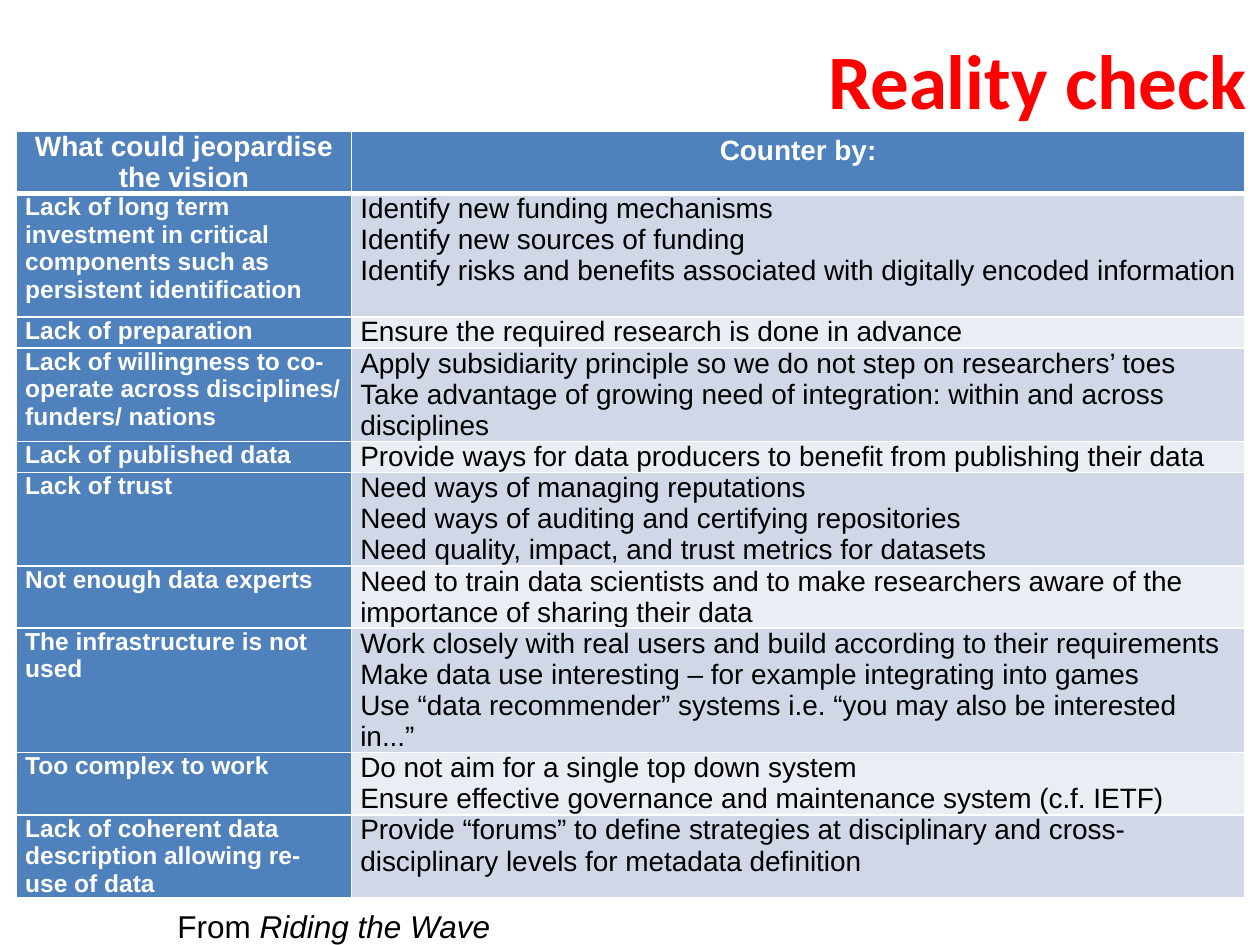
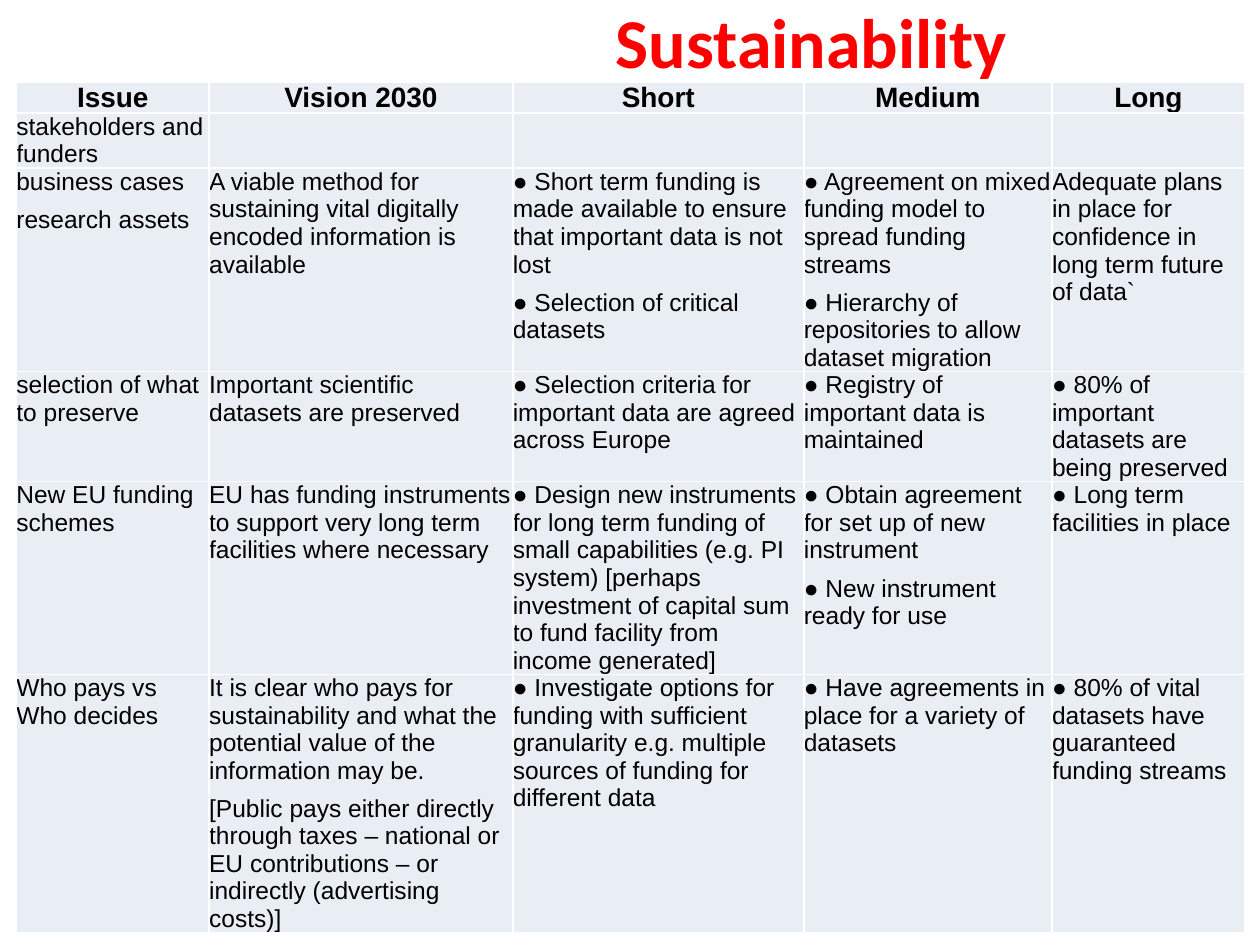
from lxml import etree
from pptx import Presentation
from pptx.dml.color import RGBColor
from pptx.enum.text import MSO_ANCHOR, MSO_AUTO_SIZE, PP_ALIGN
from pptx.oxml.ns import qn
from pptx.util import Inches, Pt

CENTER, RIGHT = PP_ALIGN.CENTER, PP_ALIGN.RIGHT
MIDDLE = MSO_ANCHOR.MIDDLE
NO_AUTOFIT = MSO_AUTO_SIZE.NONE
TITLE_ONLY = 5

RED = RGBColor(0xFF, 0x00, 0x00)
BLACK = RGBColor(0x00, 0x00, 0x00)
WHITE = RGBColor(0xFF, 0xFF, 0xFF)
BLUE = RGBColor(0x4F, 0x81, 0xBD)
BAND_DARK = RGBColor(0xD0, 0xD8, 0xE8)
BAND_LIGHT = RGBColor(0xE9, 0xED, 0xF4)

TITLE_FONT, BODY_FONT = "Calibri", "Arial"
TABLE_LEFT = 0.13

# Slide 1: risk on the left, countermeasures on the right
RISKS = [
    ("What could jeopardise the vision", "Counter by:"),
    ("Lack of long term investment in critical components such as persistent identification",
     "Identify new funding mechanisms\n"
     "Identify new sources of funding\n"
     "Identify risks and benefits associated with digitally encoded information"),
    ("Lack of preparation", "Ensure the required research is done in advance"),
    ("Lack of willingness to co-operate across disciplines/ funders/ nations",
     "Apply subsidiarity principle so we do not step on researchers’ toes\n"
     "Take advantage of growing need of integration: within and across disciplines"),
    ("Lack of published data",
     "Provide ways for data producers to benefit from publishing their data"),
    ("Lack of trust",
     "Need ways of managing reputations\n"
     "Need ways of auditing and certifying repositories\n"
     "Need quality, impact, and trust metrics for datasets"),
    ("Not enough data experts",
     "Need to train data scientists and to make researchers aware of the "
     "importance of sharing their data"),
    ("The infrastructure is not used",
     "Work closely with real users and build according to their requirements\n"
     "Make data use interesting – for example integrating into games\n"
     "Use “data recommender” systems i.e. “you may also be interested in...”"),
    ("Too complex to work",
     "Do not aim for a single top down system\n"
     "Ensure effective governance and maintenance system (c.f. IETF)"),
    ("Lack of coherent data description allowing re-use of data",
     "Provide “forums” to define strategies at disciplinary and "
     "cross-disciplinary levels for metadata definition"),
]
RISK_COLS = [2.66, 7.09]
RISK_ROWS = [0.48, 0.98, 0.24, 0.74, 0.24, 0.74, 0.49, 0.98, 0.49, 0.65]

# Slide 2: issues against time horizons
ISSUES = [
    ("Issue", "Vision 2030", "Short", "Medium", "Long"),
    ("stakeholders and funders", "", "", "", ""),
    ("business cases\nresearch assets",
     "A viable method for sustaining vital digitally encoded information is available",
     "● Short term funding is made available to ensure that important data is not lost\n"
     "● Selection of critical datasets",
     "● Agreement on mixed funding model to spread funding streams\n"
     "● Hierarchy of repositories to allow dataset migration",
     "Adequate plans in place for confidence in long term future of data`"),
    ("selection of what to preserve",
     "Important scientific datasets are preserved",
     "● Selection criteria for important data are agreed across Europe",
     "● Registry of important data is maintained",
     "● 80% of important datasets are being preserved"),
    ("New EU funding schemes",
     "EU has funding instruments to support very long term facilities where necessary",
     "● Design new instruments for long term funding of small capabilities (e.g. PI system) "
     "[perhaps investment of capital sum to fund facility from income generated]",
     "● Obtain agreement for set up of new instrument\n"
     "● New instrument ready for use",
     "● Long term facilities in place"),
    ("Who pays vs Who decides",
     "It is clear who pays for sustainability and what the potential value of the "
     "information may be.\n"
     "[Public pays either directly through taxes – national or EU contributions – "
     "or indirectly (advertising costs)]",
     "● Investigate options for funding with sufficient granularity e.g. multiple sources "
     "of funding for different data",
     "● Have agreements in place for a variety of datasets",
     "● 80% of vital datasets have guaranteed funding streams"),
]
ISSUE_COLS = [1.53, 2.41, 2.31, 1.97, 1.53]
ISSUE_ROWS = [0.24, 0.43, 1.61, 0.86, 1.53, 2.04]


def style_run(r, size, color=BLACK, bold=False, name=BODY_FONT):
    r.font.name = name
    r.font.size = Pt(size)
    r.font.bold = bold
    r.font.color.rgb = color


def add_title_slide(prs, title, height, size, align):
    s = prs.slides.add_slide(prs.slide_layouts[TITLE_ONLY])
    sp = s.shapes.title
    sp.left, sp.top = Inches(2.88), 0
    sp.width, sp.height = Inches(7.12), Inches(height)
    tf = sp.text_frame
    tf.text = title
    tf.auto_size = NO_AUTOFIT
    tf.vertical_anchor = MIDDLE
    p = tf.paragraphs[0]
    p.alignment = align
    style_run(p.runs[0], size, RED, True, TITLE_FONT)
    return s


def set_borders(cell, top=1, bottom=1):
    """White cell borders; widths in points."""
    tc_pr = cell._tc.get_or_add_tcPr()
    for tag, width in (("lnL", 1), ("lnR", 1), ("lnT", top), ("lnB", bottom)):
        ln = etree.SubElement(tc_pr, qn("a:" + tag), w=str(Pt(width)))
        fill = etree.SubElement(ln, qn("a:solidFill"))
        etree.SubElement(fill, qn("a:srgbClr"), val=str(WHITE))


def add_grid(s, top, cols, rows, data):
    """Add a table holding the texts of data, without its built-in style flags."""
    frame = s.shapes.add_table(len(rows), len(cols), Inches(TABLE_LEFT), Inches(top),
                               Inches(sum(cols)), Inches(sum(rows)))
    table = frame.table
    table.first_row = table.horz_banding = False
    for col, width in zip(table.columns, cols):
        col.width = Inches(width)
    for row, height, texts in zip(table.rows, rows, data):
        row.height = Inches(height)
        for cell, text in zip(row.cells, texts):
            cell.text = text
    return table


def style_cell(cell, fill, size, color=BLACK, bold=False, inset=0, align=None,
               space_after=None, top=1, bottom=1):
    cell.margin_left = cell.margin_right = Inches(inset)
    cell.margin_top = cell.margin_bottom = 0
    set_borders(cell, top, bottom)
    cell.fill.solid()
    cell.fill.fore_color.rgb = fill
    for p in cell.text_frame.paragraphs:
        p.alignment = align
        p.space_after = space_after
        for r in p.runs:
            style_run(r, size, color, bold)


def add_risk_table(s):
    table = add_grid(s, 1.04, RISK_COLS, RISK_ROWS, RISKS)
    for i, row in enumerate(table.rows):
        for j, cell in enumerate(row.cells):
            header = i == 0
            label = header or j == 0
            band = BAND_DARK if i % 2 else BAND_LIGHT
            style_cell(cell, BLUE if label else band,
                       size=14 if j == 0 and not header else 16,
                       color=WHITE if label else BLACK, bold=label, inset=0.07,
                       align=CENTER if header else None,
                       top=3 if i == 1 else 1, bottom=3 if header else 1)
    table.cell(0, 1).text_frame.paragraphs[0].line_spacing = 1.15


def add_issue_table(s):
    table = add_grid(s, 0.65, ISSUE_COLS, ISSUE_ROWS, ISSUES)
    for i, row in enumerate(table.rows):
        header = i == 0
        for cell in row.cells:
            style_cell(cell, BAND_LIGHT, size=16 if header else 14, bold=header,
                       align=CENTER if header else None, space_after=Pt(6))


def add_source_note(s, lead, work):
    tf = s.shapes.add_textbox(Inches(1.31), Inches(7.15), Inches(6.4), Inches(0.4)).text_frame
    tf.word_wrap = True
    p = tf.paragraphs[0]
    for text, italic in ((lead, False), (work, True)):
        r = p.add_run()
        r.text = text
        style_run(r, 18)
        r.font.italic = italic


def main():
    prs = Presentation()
    prs.slide_width, prs.slide_height = Inches(10), Inches(7.5)

    s = add_title_slide(prs, "Reality check", 1.25, 44, RIGHT)
    add_risk_table(s)
    add_source_note(s, "From ", "Riding the Wave")

    s = add_title_slide(prs, "Sustainability", 0.65, 40, CENTER)
    add_issue_table(s)

    prs.save("out.pptx")


if __name__ == "__main__":
    main()
